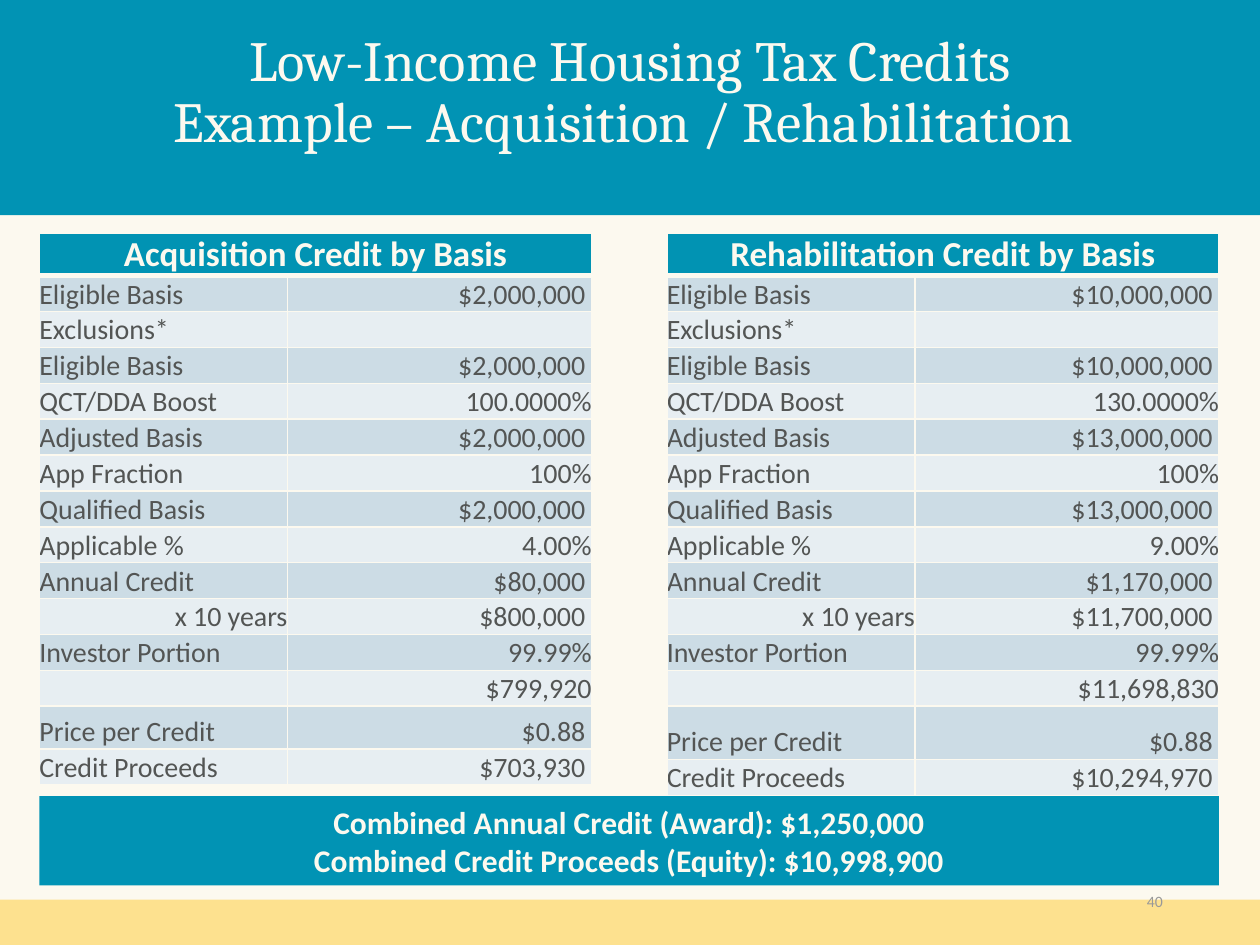
"""Build the acquisition and rehabilitation tax credit slide."""
import copy
from dataclasses import dataclass
from typing import Any

import pptx
import pptx.dml.color
import pptx.enum.shapes
import pptx.enum.text
import pptx.oxml.ns
import pptx.util
from lxml import etree

Pt = pptx.util.Pt
ALIGN = pptx.enum.text.PP_ALIGN
ANCHOR = pptx.enum.text.MSO_ANCHOR


@dataclass(frozen=True)
class Theme:
    cream: str = "FCF9EF"
    gold: str = "FDE18F"
    teal: str = "0193B4"
    head: str = "0193B3"
    dark: str = "CCDCE5"
    light: str = "E7EEF2"
    ink: str = "535554"
    grey: str = "999999"
    serif: str = "Cambria"
    sans: str = "Calibri"
    title: float = 32.4
    table: float = 20
    total: float = 18
    cell: float = 16
    note: float = 9


@dataclass(frozen=True)
class Box:
    left: float
    top: float
    width: float
    height: float

    def spans(self) -> tuple[int, ...]:
        return tuple(Pt(n) for n in (self.left, self.top, self.width, self.height))


@dataclass(frozen=True)
class Panel:
    title: str
    left: float
    price: float
    values: tuple[str, ...]


THEME = Theme()
TOP, HEAD, ROW = 133.2, 24.4, 20.5
COLS = (141.8, 173.8)
PRICE = "Price per Credit"
YEARS = " x 10 years"
LABELS = (
    "Eligible Basis", "Exclusions*", "Eligible Basis", "QCT/DDA Boost",
    "Adjusted Basis", "App Fraction", "Qualified Basis", "Applicable %",
    "Annual Credit", YEARS, "Investor Portion", "", PRICE, "Credit Proceeds",
)
PANELS = (
    Panel("Acquisition Credit by Basis", 22.5, 24.5, (
        " $2,000,000 ", "", " $2,000,000 ", "100.0000%", " $2,000,000 ",
        "100%", " $2,000,000 ", "4.00%", " $80,000 ", " $800,000 ",
        "99.99%", "$799,920", " $0.88 ", " $703,930 ")),
    Panel("Rehabilitation Credit by Basis", 381, 30.5, (
        " $10,000,000 ", "", " $10,000,000 ", "130.0000%", " $13,000,000 ",
        "100%", " $13,000,000 ", "9.00%", " $1,170,000 ", " $11,700,000 ",
        "99.99%", "$11,698,830", " $0.88 ", " $10,294,970 ")),
)


def tint(code: str) -> pptx.dml.color.RGBColor:
    return pptx.dml.color.RGBColor.from_string(code)


def apply(item: Any, form: dict[str, Any]) -> None:
    for name, value in form.items():
        setattr(item, name, value)


def paint(item: Any, code: str) -> None:
    item.fill.solid()
    item.fill.fore_color.rgb = tint(code)


def write(frame: Any, text: str, size: float, code: str, align: Any,
          face: str = THEME.sans, bold: bool = False) -> None:
    frame.text = text
    for para in frame.paragraphs:
        para.alignment = align
        for run in para.runs:
            apply(run.font, {"size": Pt(size), "name": face, "bold": bold})
            run.font.color.rgb = tint(code)
        if not para.runs:
            etree.SubElement(para._p, pptx.oxml.ns.qn("a:endParaRPr"),
                             sz=str(round(size * 100)))


def band(slide: Any, box: Box, code: str) -> Any:
    shape = slide.shapes.add_shape(
        pptx.enum.shapes.MSO_SHAPE.RECTANGLE, *box.spans())
    shape.shadow.inherit = False
    shape.line.fill.background()
    paint(shape, code)
    return shape


def edge(cell: Any, widths: dict[str, float]) -> None:
    qn = pptx.oxml.ns.qn
    props = cell._tc.get_or_add_tcPr()
    for side in "LRTB":
        line = etree.SubElement(props, qn(f"a:ln{side}"),
                                w=str(Pt(widths.get(side, 1))))
        fill = etree.SubElement(line, qn("a:solidFill"))
        etree.SubElement(fill, qn("a:srgbClr"), val=THEME.cream)


def dress(cell: Any, code: str, widths: dict[str, float]) -> None:
    apply(cell, {"margin_left": 0, "margin_right": 0, "margin_top": 0,
                 "margin_bottom": 0, "vertical_anchor": ANCHOR.BOTTOM})
    edge(cell, widths)
    paint(cell, code)


def grid(slide: Any, panel: Panel) -> None:
    tall = [HEAD] + [panel.price if name == PRICE else ROW for name in LABELS]
    box = Box(panel.left, TOP, sum(COLS), sum(tall))
    table = slide.shapes.add_table(len(tall), len(COLS), *box.spans()).table
    for col, width in zip(table.columns, COLS):
        col.width = Pt(width)
    for row, height in zip(table.rows, tall):
        row.height = Pt(height)
    for cell in table.rows[0].cells:
        dress(cell, THEME.head, {"B": 3})
    table.cell(0, 0).merge(table.cell(0, 1))
    write(table.cell(0, 0).text_frame, panel.title, THEME.table, THEME.cream,
          ALIGN.CENTER, bold=True)
    for num, pair in enumerate(zip(LABELS, panel.values), 1):
        for col, text in enumerate(pair):
            cell = table.cell(num, col)
            dress(cell, THEME.dark if num % 2 else THEME.light,
                  {"T": 3} if num == 1 else {})
            right = col == 1 or text == YEARS
            write(cell.text_frame, text, THEME.cell, THEME.ink,
                  ALIGN.RIGHT if right else ALIGN.LEFT)


def head(slide: Any, under: Any) -> None:
    title = slide.shapes.title
    names = ("left", "top", "width", "height")
    apply(title, dict(zip(names, Box(90, 31, 540, 60.5).spans())))
    frame = title.text_frame
    write(frame, "Low-Income Housing Tax Credits\v"
          "Example – Acquisition / Rehabilitation ",
          THEME.title, THEME.cream, ALIGN.CENTER, THEME.serif)
    apply(frame, {"vertical_anchor": ANCHOR.BOTTOM, "word_wrap": True,
                  "auto_size": pptx.enum.text.MSO_AUTO_SIZE.NONE,
                  "margin_left": Pt(6), "margin_right": Pt(6),
                  "margin_top": Pt(3), "margin_bottom": Pt(3)})
    para = frame.paragraphs[0]
    para.line_spacing = 0.9
    for mark in para._p.findall(pptx.oxml.ns.qn("a:br")):
        mark.append(copy.deepcopy(para.runs[0]._r.rPr))
    under.element.addnext(title.element)


def main() -> None:
    deck = pptx.Presentation()
    apply(deck, {"slide_width": Pt(720), "slide_height": Pt(540)})
    slide = deck.slides.add_slide(deck.slide_layouts[5])
    paint(slide.background, THEME.cream)
    band(slide, Box(0, 514, 720, 26), THEME.gold)
    head(slide, band(slide, Box(0, 0, 720, 123), THEME.teal))
    page = slide.shapes.add_textbox(*Box(508.5, 500.5, 162, 28.8).spans())
    write(page.text_frame, "40", THEME.note, THEME.grey, ALIGN.RIGHT)
    apply(page.text_frame, {"word_wrap": True, "vertical_anchor": ANCHOR.MIDDLE,
                            "margin_left": Pt(6), "margin_right": Pt(6)})
    for panel in PANELS:
        grid(slide, panel)
    total = band(slide, Box(22.5, 455, 674, 51), THEME.teal)
    write(total.text_frame, "Combined Annual Credit (Award): $1,250,000\n"
          "Combined Credit Proceeds (Equity): $10,998,900",
          THEME.total, THEME.cream, ALIGN.CENTER, bold=True)
    total.text_frame.vertical_anchor = ANCHOR.MIDDLE
    deck.save("out.pptx")


if __name__ == "__main__":
    main()
